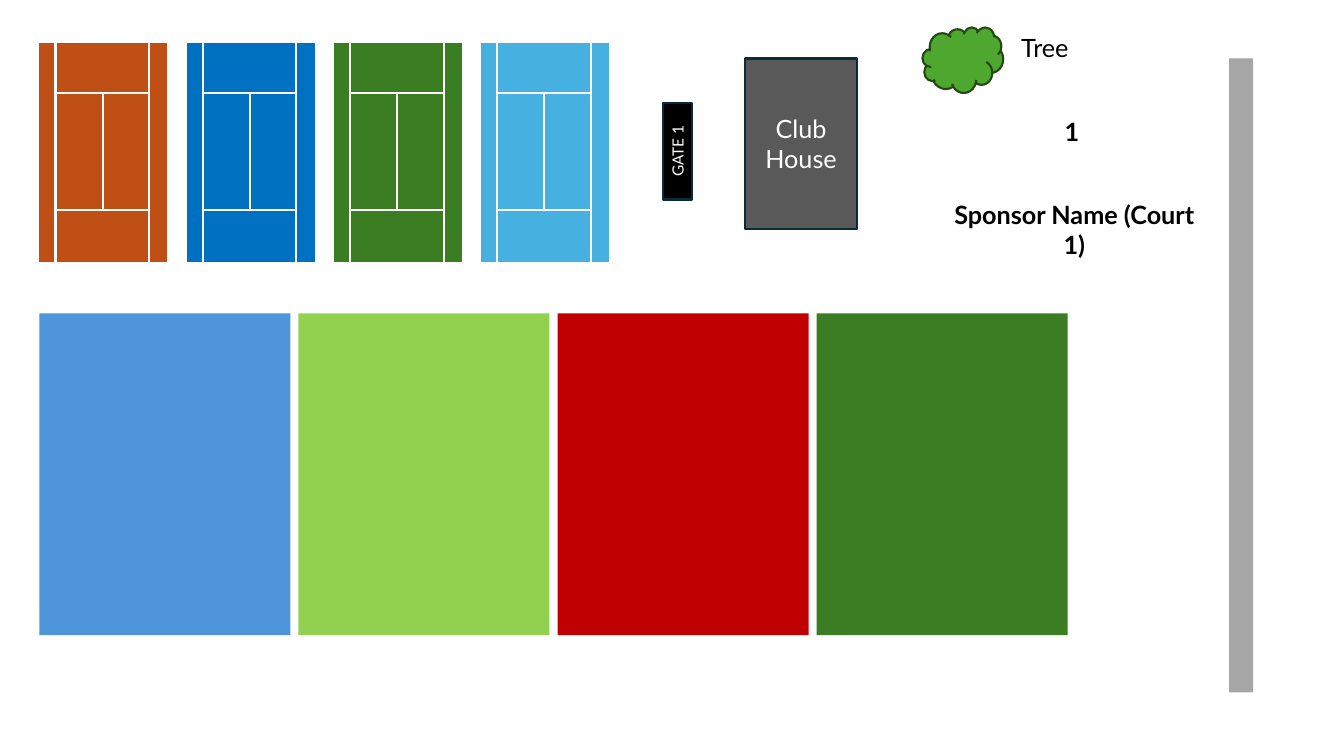
from lxml.etree import SubElement
from pptx import Presentation
from pptx.dml.color import RGBColor
from pptx.enum.shapes import MSO_CONNECTOR, MSO_SHAPE
from pptx.enum.text import MSO_ANCHOR, MSO_AUTO_SIZE, PP_ALIGN
from pptx.oxml.ns import qn
from pptx.util import Inches, Pt

COLOURS = {
    "white": "FFFFFF", "black": "000000", "clay": "C04F15",
    "blue": "0070C0", "green": "3B7D23", "sky": "46B1E1",
    "pale blue": "4E95D9", "lime": "92D050", "red": "C00000",
    "charcoal": "595959", "navy": "092A39", "grey": "A6A6A6",
    "leaf": "4EA72E", "dark leaf": "224914",
}


def colour(name):
    return RGBColor.from_string(COLOURS[name])


class CourtMap:
    font_name = "Lato"
    line_width = Pt(1.5)

    def __init__(self, page):
        self.page = page

    def shape(self, left, top, width, height, fill, line=None,
              kind=MSO_SHAPE.RECTANGLE, parent=None):
        shapes = (parent or self.page).shapes
        shape = shapes.add_shape(kind, Inches(left), Inches(top),
                                 Inches(width), Inches(height))
        shape.shadow.inherit = False
        shape.fill.solid()
        shape.fill.fore_color.rgb = colour(fill)
        if line:
            shape.line.color.rgb = colour(line)
            shape.line.width = self.line_width
        else:
            shape.line.fill.background()
        return shape

    def set_text(self, shape, text, size=18, ink="black", bold=False,
                 align=PP_ALIGN.LEFT):
        shape.text_frame.text = text
        paragraph = shape.text_frame.paragraphs[0]
        paragraph.alignment = align
        font = paragraph.runs[0].font
        font.name = self.font_name
        font.size = Pt(size)
        font.bold = bold
        font.color.rgb = colour(ink)

    def building(self, left, top, width, height, fill, text, size):
        building = self.shape(left, top, width, height, fill, "navy")
        building.text_frame.vertical_anchor = MSO_ANCHOR.MIDDLE
        building.text_frame.word_wrap = True
        self.set_text(building, text, size, "white", align=PP_ALIGN.CENTER)
        return building

    def label(self, left, top, width, height, text, wrap=False, **style):
        box = self.page.shapes.add_textbox(Inches(left), Inches(top),
                                           Inches(width), Inches(height))
        box.text_frame.word_wrap = wrap
        box.text_frame.auto_size = MSO_AUTO_SIZE.SHAPE_TO_FIT_TEXT
        self.set_text(box, text, **style)

    def line(self, parent, x1, y1, x2, y2):
        line = parent.shapes.add_connector(
            MSO_CONNECTOR.STRAIGHT, Inches(x1), Inches(y1), Inches(x2), Inches(y2))
        line.line.color.rgb = colour("white")
        line.line.width = self.line_width
        SubElement(line.element.spPr, qn("a:effectLst"))

    def court(self, left, surface):
        top, width, height = 0.42, 1.29, 2.19
        bottom = top + height
        left_side, centre, right_side = left + 0.17, left + 0.64, left + 1.1
        upper_service, lower_service = top + 0.5, top + 1.66
        group = self.page.shapes.add_group_shape()
        self.shape(left, top, width, height, surface, "white", parent=group)
        for side in (left_side, right_side):
            self.line(group, side, top, side, bottom)
        for service in (upper_service, lower_service):
            self.line(group, left_side, service, right_side, service)
        self.line(group, centre, upper_service, centre, lower_service)


def main():
    deck = Presentation()
    deck.slide_width = Inches(13.33)
    deck.slide_height = Inches(7.5)
    page = deck.slides.add_slide(deck.slide_layouts[6])
    court_map = CourtMap(page)

    for index, surface in enumerate(("clay", "blue", "green", "sky")):
        court_map.court(0.38 + 1.46 * index, surface)
    for index, fill in enumerate(("pale blue", "lime", "red", "green")):
        court_map.shape(0.39 + 2.57 * index, 3.11, 2.49, 3.19, fill)

    court_map.building(7.39, 0.58, 1.11, 1.69, "charcoal", "Club House", 18)
    court_map.label(10.46, 1.11, 0.4, 0.4, "1", bold=True)
    court_map.label(9.35, 1.93, 2.61, 0.71, "Sponsor Name (Court 1)",
                    wrap=True, bold=True, align=PP_ALIGN.CENTER)
    court_map.shape(12.19, 0.58, 0.24, 6.29, "grey")
    gate = court_map.building(6.58, 1.02, 0.28, 0.96, "black", "GATE 1", 11)
    gate.element.txBody.bodyPr.set("vert", "vert270")
    court_map.shape(9.15, 0.27, 0.8, 0.65, "leaf", "dark leaf", MSO_SHAPE.CLOUD)
    court_map.label(10.03, 0.27, 0.8, 0.4, "Tree")

    deck.save("out.pptx")


if __name__ == "__main__":
    main()
